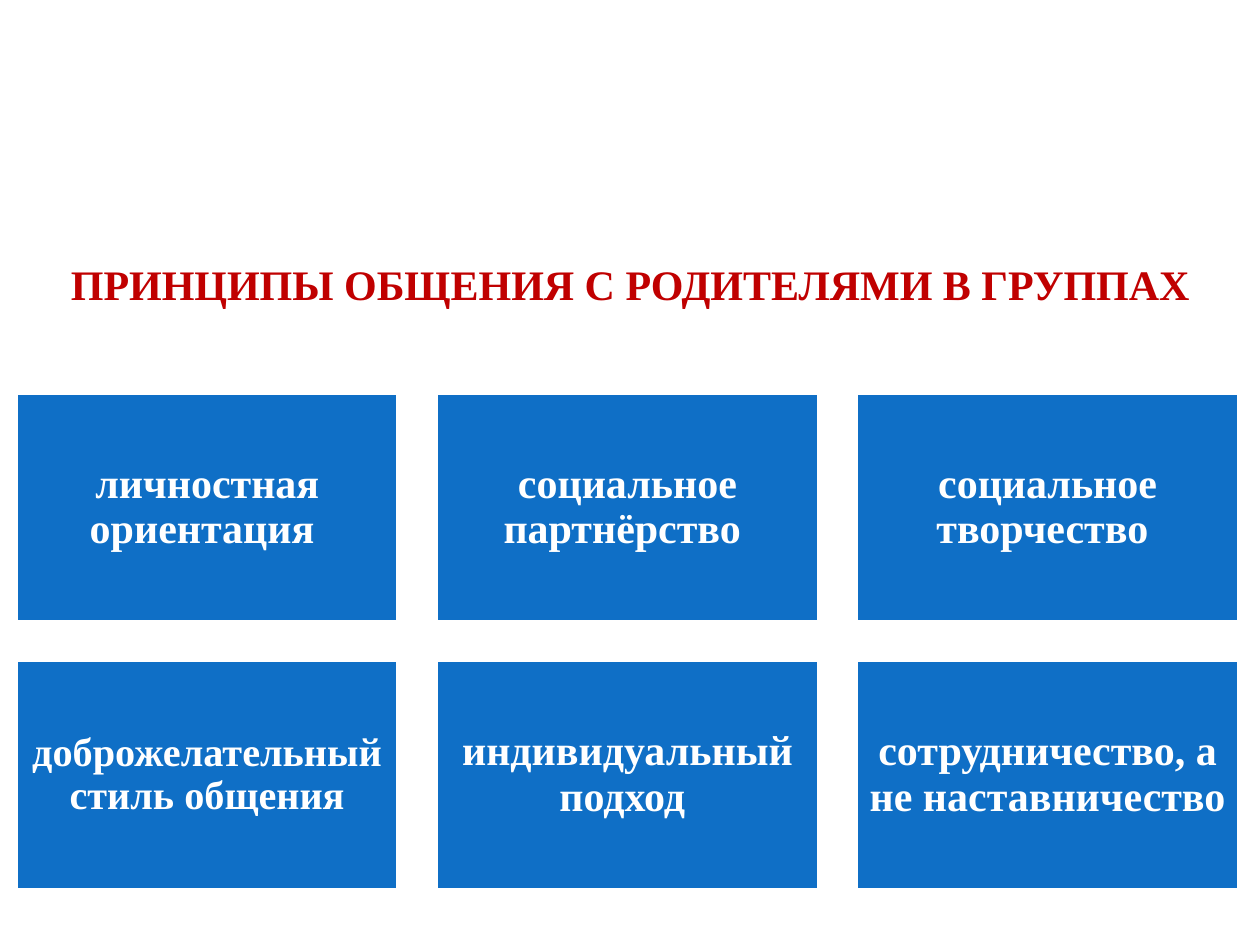
from dataclasses import dataclass

from pptx import Presentation
from pptx.dml.color import RGBColor
from pptx.enum.shapes import MSO_SHAPE
from pptx.enum.text import MSO_ANCHOR, MSO_AUTO_SIZE, PP_ALIGN
from pptx.util import Cm, Pt


@dataclass(frozen=True)
class Theme:
    font: str = "Times New Roman"
    heading: RGBColor = RGBColor(0xC0, 0x00, 0x00)
    card: RGBColor = RGBColor(0x0F, 0x6F, 0xC6)
    white: RGBColor = RGBColor(0xFF, 0xFF, 0xFF)
    size: Pt = Pt(24)
    compact_size: Pt = Pt(23)


theme = Theme()


def write_centred(frame, text, size, color):
    """Fill the frame's first paragraph with one bold run and return it."""
    frame.word_wrap = True
    paragraph = frame.paragraphs[0]
    paragraph.alignment = PP_ALIGN.CENTER
    run = paragraph.add_run()
    run.text = text
    run.font.name = theme.font
    run.font.size = size
    run.font.bold = True
    run.font.color.rgb = color
    return paragraph


presentation = Presentation()
presentation.slide_width = Cm(25.4)
presentation.slide_height = Cm(19.05)
slide = presentation.slides.add_slide(presentation.slide_layouts[6])

# Principles, three to a row
principles = [
    ("личностная ориентация ", theme.size),
    ("социальное партнёрство ", theme.size),
    ("социальное творчество ", theme.size),
    ("доброжелательный стиль общения", theme.compact_size),
    ("индивидуальный подход ", theme.size),
    ("сотрудничество, а не наставничество", theme.size),
]
columns = 3
left, top = 0.33, 7.92
width, height = 7.7, 4.62
gap = 0.77

for index, (principle, size) in enumerate(principles):
    row, column = divmod(index, columns)
    card = slide.shapes.add_shape(
        MSO_SHAPE.RECTANGLE,
        Cm(left + column * (width + gap)),
        Cm(top + row * (height + gap)),
        Cm(width),
        Cm(height),
    )
    card.shadow.inherit = False
    card.fill.solid()
    card.fill.fore_color.rgb = theme.card
    card.line.color.rgb = theme.white
    card.line.width = Pt(2)

    frame = card.text_frame
    frame.vertical_anchor = MSO_ANCHOR.MIDDLE
    frame.margin_left = frame.margin_right = Cm(0.25)
    frame.margin_top = frame.margin_bottom = Cm(0.25)
    paragraph = write_centred(frame, principle, size, theme.white)
    paragraph.line_spacing = 0.9

# Heading
heading = slide.shapes.add_textbox(Cm(0), Cm(5.08), Cm(25.42), Cm(1.28))
write_centred(
    heading.text_frame,
    "ПРИНЦИПЫ ОБЩЕНИЯ С РОДИТЕЛЯМИ В ГРУППАХ",
    theme.size,
    theme.heading,
)
heading.text_frame.auto_size = MSO_AUTO_SIZE.SHAPE_TO_FIT_TEXT

presentation.save("out.pptx")
